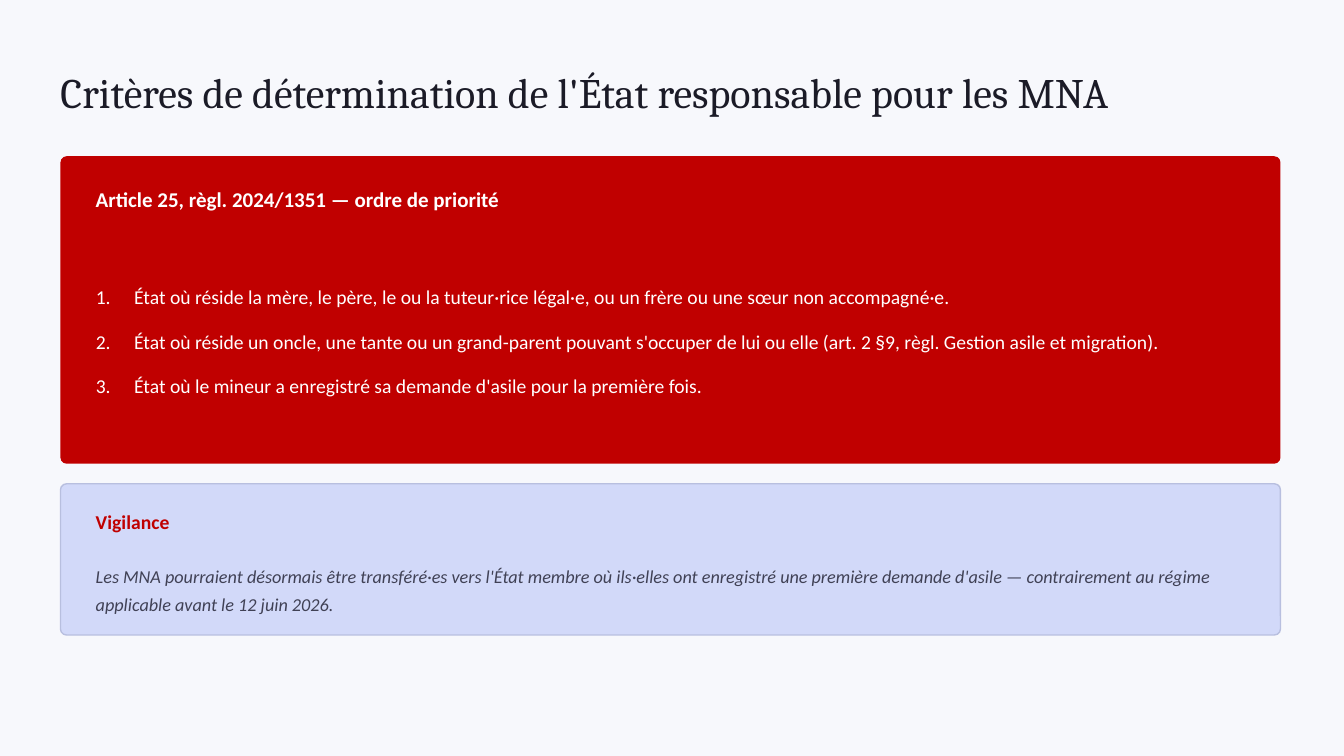
from lxml import etree
from pptx import Presentation
from pptx.dml.color import RGBColor
from pptx.enum import shapes, text
from pptx.oxml.ns import qn
from pptx.util import Inches, Pt

COLORS = {
    "background": "F7F8FC", "ink": "1B1B27", "red": "C00000", "white": "FFFFFF",
    "lavender": "D2D9F9", "border": "B8BFDF", "slate": "404155",
}
TITLE = "Critères de détermination de l'État responsable pour les MNA"
PRIORITY_HEADING = "Article 25, règl. 2024/1351 — ordre de priorité"
CRITERIA = [
    "État où réside la mère, le père, le ou la tuteur·rice légal·e, ou un frère ou une sœur non accompagné·e.",
    "État où réside un oncle, une tante ou un grand-parent pouvant s'occuper de lui ou elle "
    "(art. 2 §9, règl. Gestion asile et migration).",
    "État où le mineur a enregistré sa demande d'asile pour la première fois.",
]
WARNING_HEADING = "Vigilance"
WARNING = (
    "Les MNA pourraient désormais être transféré·es vers l'État membre où ils·elles ont enregistré "
    "une première demande d'asile — contrairement au régime applicable avant le 12 juin 2026."
)
MARGIN, CARD_WIDTH = 0.6, 12.1
PADDING = 0.35
TEXT_LEFT, TEXT_WIDTH = MARGIN + PADDING, CARD_WIDTH - 2 * PADDING
INDENT = Inches(0.38)


def color(name):
    return RGBColor.from_string(COLORS[name])


def place(box, left, top, width, height):
    box.left, box.top, box.width, box.height = map(Inches, (left, top, width, height))


def add_card(page, top, height, radius, fill, border=None):
    card = page.shapes.add_shape(
        shapes.MSO_SHAPE.ROUNDED_RECTANGLE,
        Inches(MARGIN), Inches(top), Inches(CARD_WIDTH), Inches(height))
    card.adjustments[0] = radius
    card.shadow.inherit = False
    card.fill.solid()
    card.fill.fore_color.rgb = color(fill)
    if border:
        card.line.color.rgb = color(border)
        card.line.width = Pt(1)
    else:
        card.line.fill.background()


def write(box, lines, size, ink, font="Calibri", bold=False, italic=False,
          spacing=1.0, after=0, numbered=False):
    frame = box.text_frame
    frame.word_wrap = True
    frame.auto_size = text.MSO_AUTO_SIZE.NONE
    frame.vertical_anchor = text.MSO_ANCHOR.MIDDLE
    frame.margin_left = frame.margin_right = frame.margin_top = frame.margin_bottom = 0
    for index, line in enumerate(lines):
        para = frame.add_paragraph() if index else frame.paragraphs[0]
        para.alignment = text.PP_ALIGN.LEFT
        para.line_spacing = spacing
        para.space_before = Pt(0)
        para.space_after = Pt(after)
        if numbered:
            number_paragraph(para, font)
        span = para.add_run()
        span.text = line
        span.font.name = font
        span.font.size = Pt(size)
        span.font.bold = bold
        span.font.italic = italic
        span.font.color.rgb = color(ink)


def number_paragraph(para, font):
    props = para._p.get_or_add_pPr()
    props.set("marL", str(INDENT))
    props.set("indent", str(-INDENT))
    etree.SubElement(props, qn("a:buFont"), typeface=font)
    etree.SubElement(props, qn("a:buAutoNum"), type="arabicPeriod")


def add_text(page, top, height, line, size, ink, **style):
    box = page.shapes.add_textbox(0, 0, 0, 0)
    place(box, TEXT_LEFT, top, TEXT_WIDTH, height)
    write(box, [line], size, ink, **style)


def main():
    deck = Presentation()
    deck.slide_width, deck.slide_height = Inches(13.33), Inches(7.5)
    page = deck.slides.add_slide(deck.slide_layouts[1])
    page.background.fill.solid()
    page.background.fill.fore_color.rgb = color("background")

    title, criteria = page.placeholders
    place(title, MARGIN, 0.45, 12.13, 0.9)
    write(title, [TITLE], 30, "ink", font="Cambria", spacing=1.04)

    add_card(page, 1.55, 3.05, 0.02, "red")
    add_text(page, 1.78, 0.4, PRIORITY_HEADING, 15, "white", bold=True)
    place(criteria, TEXT_LEFT, 2.25, TEXT_WIDTH, 2.2)
    write(criteria, CRITERIA, 14, "white", spacing=1.3, after=10, numbered=True)
    page.shapes._spTree.append(criteria._element)

    add_card(page, 4.8, 1.5, 0.04, "lavender", "border")
    add_text(page, 5, 0.35, WARNING_HEADING, 14, "red", bold=True)
    add_text(page, 5.4, 0.85, WARNING, 13, "slate", italic=True, spacing=1.28)

    deck.save("out.pptx")


if __name__ == "__main__":
    main()
